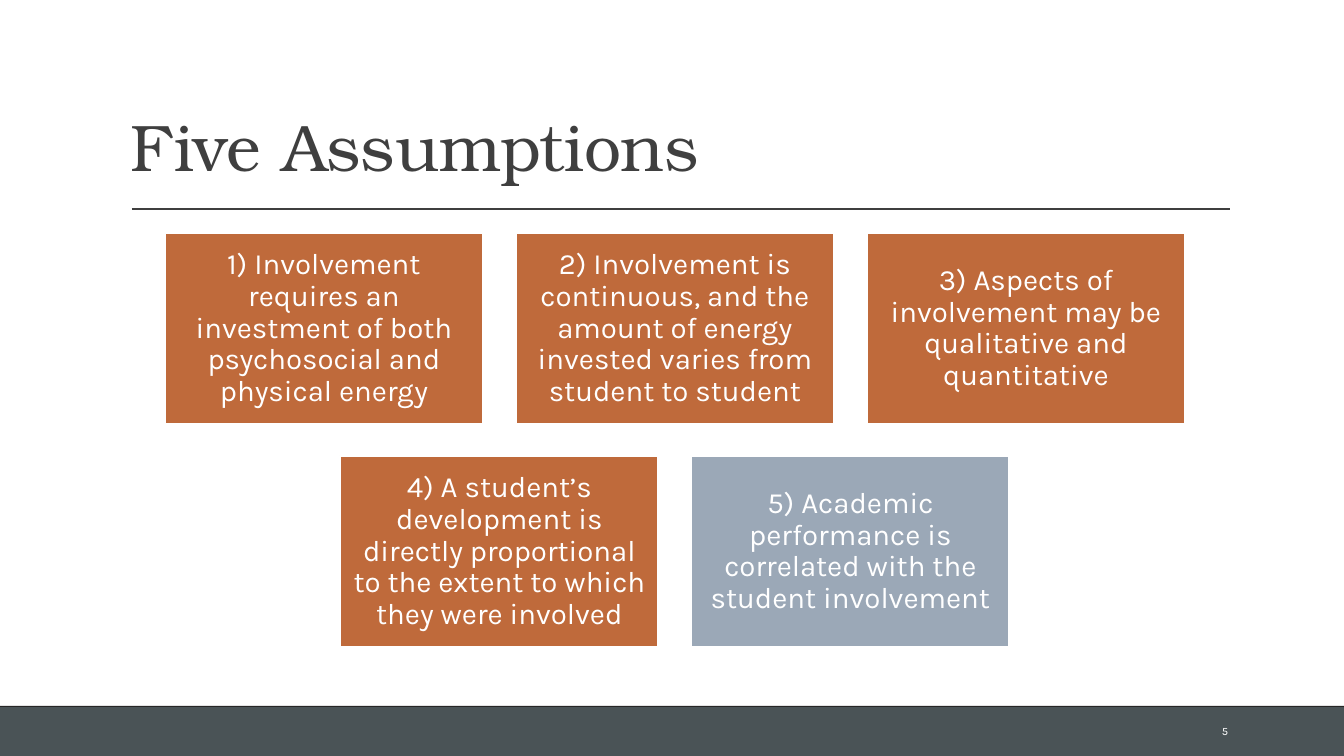
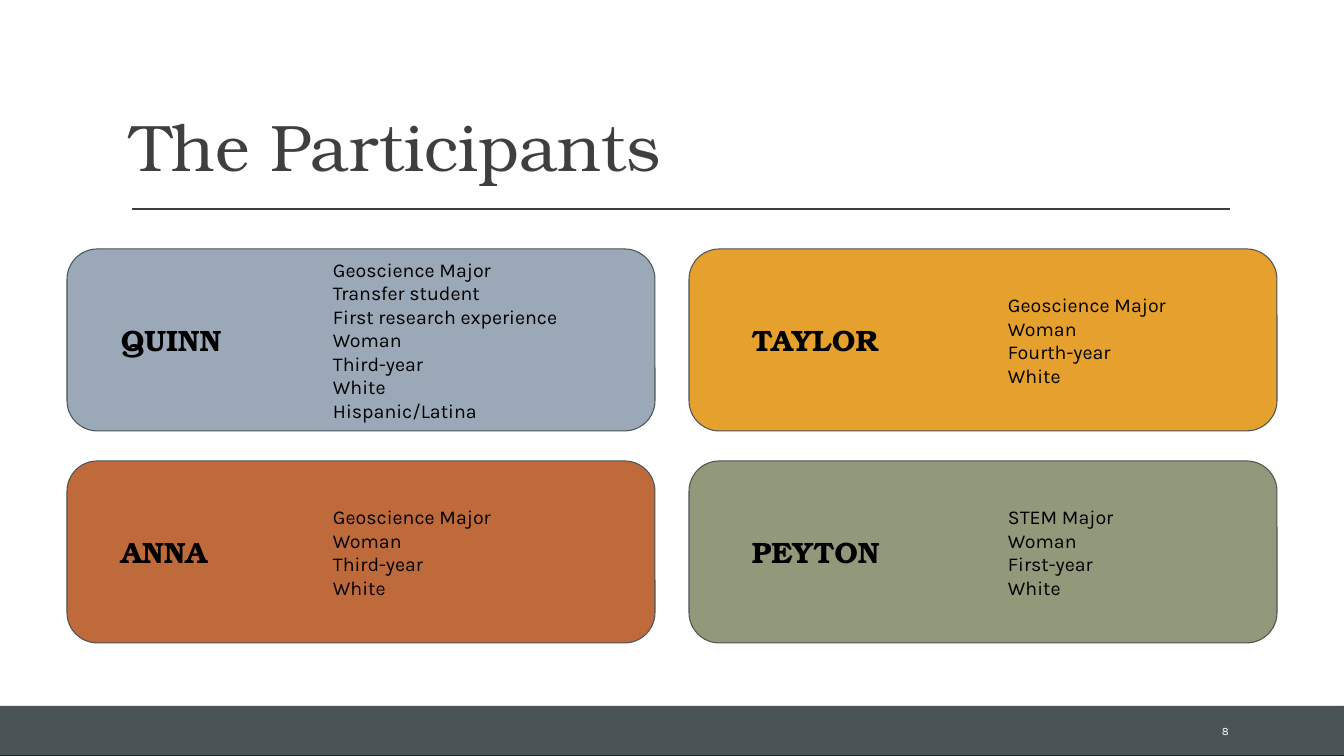
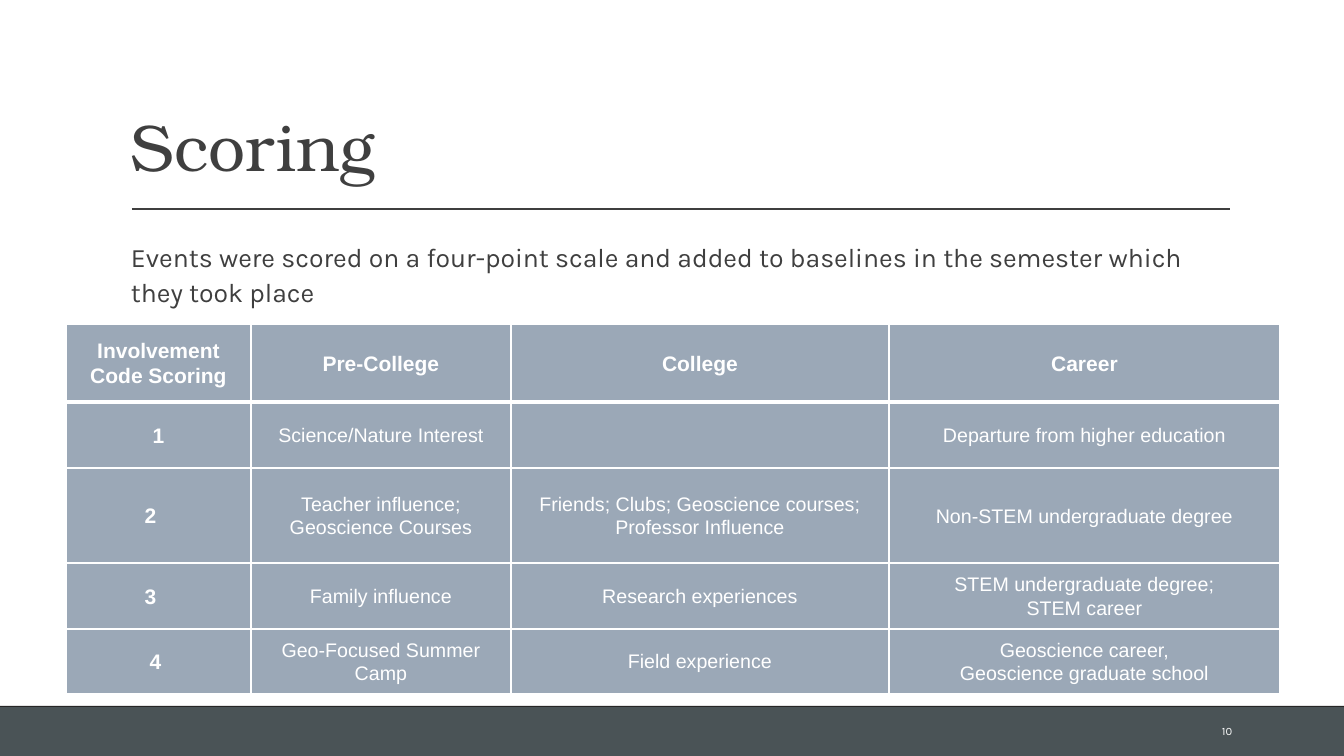
from lxml import etree
from pptx import Presentation
from pptx import util as u
from pptx.dml.color import RGBColor
from pptx.enum import shapes, text
from pptx.oxml.ns import qn

SCALE = 914400 / 100.8
WIDTH, HEIGHT = 1344, 756
SERIF, SANS, TABLE_FONT = "TeX Gyre Bonum", "Karla", "Arial"
COLORS = {
    "ink": "3F3F3F", "dark": "262626", "slate": "4A5356", "white": "FFFFFF",
    "black": "000000", "rust": "BF6A3B", "blue": "9BA8B7", "gold": "E6A02E",
    "olive": "92987A",
}

ASSUMPTION_ROWS = [
    [
        ("1) Involvement requires an investment of both psychosocial and physical energy", "rust"),
        ("2) Involvement is continuous, and the amount of energy invested varies from student to student", "rust"),
        ("3) Aspects of involvement may be qualitative and quantitative", "rust"),
    ],
    [
        ("4) A student’s development is directly proportional to the extent to which they were involved", "rust"),
        ("5) Academic performance is correlated with the student involvement", "blue"),
    ],
]

PARTICIPANT_ROWS = [
    [
        ("QUINN", "blue", ["Geoscience Major", "Transfer student", "First research experience",
                           "Woman", "Third-year", "White", "Hispanic/Latina"]),
        ("TAYLOR", "gold", ["Geoscience Major", "Woman", "Fourth-year", "White"]),
    ],
    [
        ("ANNA", "rust", ["Geoscience Major", "Woman", "Third-year", "White"]),
        ("PEYTON", "olive", ["STEM Major", "Woman", "First-year", "White"]),
    ],
]

SCORING_INTRO = ("Events were scored on a four-point scale and added to baselines "
                 "in the semester which they took place")
SCORING_ROWS = [
    ["Involvement Code Scoring", "Pre-College", "College", "Career"],
    ["1", "Science/Nature Interest", "", "Departure from higher education"],
    ["2", "Teacher influence; Geoscience Courses",
     "Friends; Clubs; Geoscience courses; Professor Influence", "Non-STEM undergraduate degree"],
    ["3", "Family influence", "Research experiences", "STEM undergraduate degree;\nSTEM career"],
    ["4", "Geo-Focused Summer Camp", "Field experience",
     "Geoscience career,\nGeoscience graduate school"],
]
COLUMN_WIDTHS = [185, 260, 378, 391]
ROW_HEIGHTS = [78, 66, 95, 66, 65]
SCORE_NUDGES = {2: 16, 3: 16, 4: 6}


def px(n):
    return u.Emu(round(n * SCALE))


def rgb(name):
    return RGBColor.from_string(COLORS[name])


def format_text(tf, content, size, font, color, bold=False, align="LEFT", spacing=1.0):
    tf.text = content
    for p in tf.paragraphs:
        p.alignment = getattr(text.PP_ALIGN, align)
        p.line_spacing = spacing
        for r in p.runs:
            r.font.size = u.Pt(size)
            r.font.name = font
            r.font.bold = bold
            r.font.color.rgb = rgb(color)


def fill_frame(sp, content, size, font, color, anchor="MIDDLE", inset=(10, 5), **style):
    tf = sp.text_frame
    tf.word_wrap = True
    tf.vertical_anchor = getattr(text.MSO_ANCHOR, anchor)
    tf.margin_left = tf.margin_right = px(inset[0])
    tf.margin_top = tf.margin_bottom = px(inset[1])
    format_text(tf, content, size, font, color, **style)


def add_text(s, box, *args, **style):
    fill_frame(s.shapes.add_textbox(*map(px, box)), *args, **style)


def add_block(s, box, fill, line=None, weight=0.75, kind="RECTANGLE"):
    sp = s.shapes.add_shape(getattr(shapes.MSO_SHAPE, kind), *map(px, box))
    sp.shadow.inherit = False
    sp.fill.solid()
    sp.fill.fore_color.rgb = rgb(fill)
    if line:
        sp.line.color.rgb = rgb(line)
        sp.line.width = u.Pt(weight)
    else:
        sp.line.fill.background()
    return sp


def add_slide(prs, title, number, band_top=708):
    s = prs.slides.add_slide(prs.slide_layouts[6])
    add_block(s, (0, 706, WIDTH, 50), "dark")
    rule = s.shapes.add_connector(shapes.MSO_CONNECTOR.STRAIGHT, px(132), px(209), px(1230), px(209))
    rule.line.color.rgb = rgb("ink")
    rule.line.width = u.Pt(1)
    etree.SubElement(rule._element.spPr, qn("a:effectLst"))
    add_text(s, (121, 31, 1109, 160), title, 47, SERIF, "ink", anchor="BOTTOM", spacing=0.9)
    add_block(s, (0, band_top, WIDTH, 48), "slate", "slate")
    add_text(s, (1212, 711, 86, 40), str(number), 8, SANS, "white")
    return s


def add_assumptions(prs):
    s = add_slide(prs, "Five Assumptions", 5)
    width, height, gap = 319, 191, 32
    for i, row in enumerate(ASSUMPTION_ROWS):
        left = 675 - (len(row) * (width + gap) - gap) / 2
        for j, (content, fill) in enumerate(row):
            box = (left + j * (width + gap), 233 + i * (height + gap), width, height)
            sp = add_block(s, box, fill, "white", 2)
            fill_frame(sp, content, 21, SANS, "white", inset=(10, 10), align="CENTER", spacing=0.9)


def add_participants(prs):
    s = add_slide(prs, "The Participants", 8, band_top=707)
    width, height = 588, 182
    columns = [(67, 111, 323), (689, 742, 998)]
    for i, row in enumerate(PARTICIPANT_ROWS):
        top = 249 + i * 212
        for (left, name_left, facts_left), (name, fill, facts) in zip(columns, row):
            add_block(s, (left, top, width, height), fill, "slate", kind="ROUNDED_RECTANGLE")
            add_text(s, (name_left, top, 170, height), name, 21, SERIF, "black", bold=True)
            add_text(s, (facts_left, top, 270, height), "\n".join(facts), 14, SANS, "black",
                     inset=(10, 0))


def add_border(cell, side, weight):
    ln = etree.SubElement(cell._tc.get_or_add_tcPr(), qn("a:ln" + side), w=str(u.Pt(weight)))
    fill = etree.SubElement(ln, qn("a:solidFill"))
    etree.SubElement(fill, qn("a:srgbClr"), val=COLORS["white"])


def add_scoring(prs):
    s = add_slide(prs, "Scoring", 10)
    add_text(s, (131, 233, 1099, 85), SCORING_INTRO, 19, SANS, "ink",
             anchor="TOP", inset=(0, 5), spacing=1.1)
    box = (66, 324, sum(COLUMN_WIDTHS), sum(ROW_HEIGHTS))
    table = s.shapes.add_table(len(ROW_HEIGHTS), len(COLUMN_WIDTHS), *map(px, box)).table
    table.first_row = table.horz_banding = False
    for column, width in zip(table.columns, COLUMN_WIDTHS):
        column.width = px(width)
    for i, (row, height) in enumerate(zip(SCORING_ROWS, ROW_HEIGHTS)):
        table.rows[i].height = px(height)
        for j, content in enumerate(row):
            cell = table.cell(i, j)
            heading = i == 0 or j == 0
            cell.margin_left = px(7)
            cell.margin_right = px(7 + (SCORE_NUDGES.get(i, 0) if j == 0 else 0))
            cell.margin_top = cell.margin_bottom = 0
            cell.vertical_anchor = text.MSO_ANCHOR.MIDDLE
            for side in "LRTB":
                thick = (i, side) in ((0, "B"), (1, "T"))
                add_border(cell, side, 3 if thick else 1)
            cell.fill.solid()
            cell.fill.fore_color.rgb = rgb("blue")
            format_text(cell.text_frame, content, 15 if heading else 14, TABLE_FONT, "white",
                        bold=heading, align="CENTER", spacing=1.07)


def main():
    prs = Presentation()
    prs.slide_width, prs.slide_height = px(WIDTH), px(HEIGHT)
    add_assumptions(prs)
    add_participants(prs)
    add_scoring(prs)
    prs.save("out.pptx")


if __name__ == "__main__":
    main()
